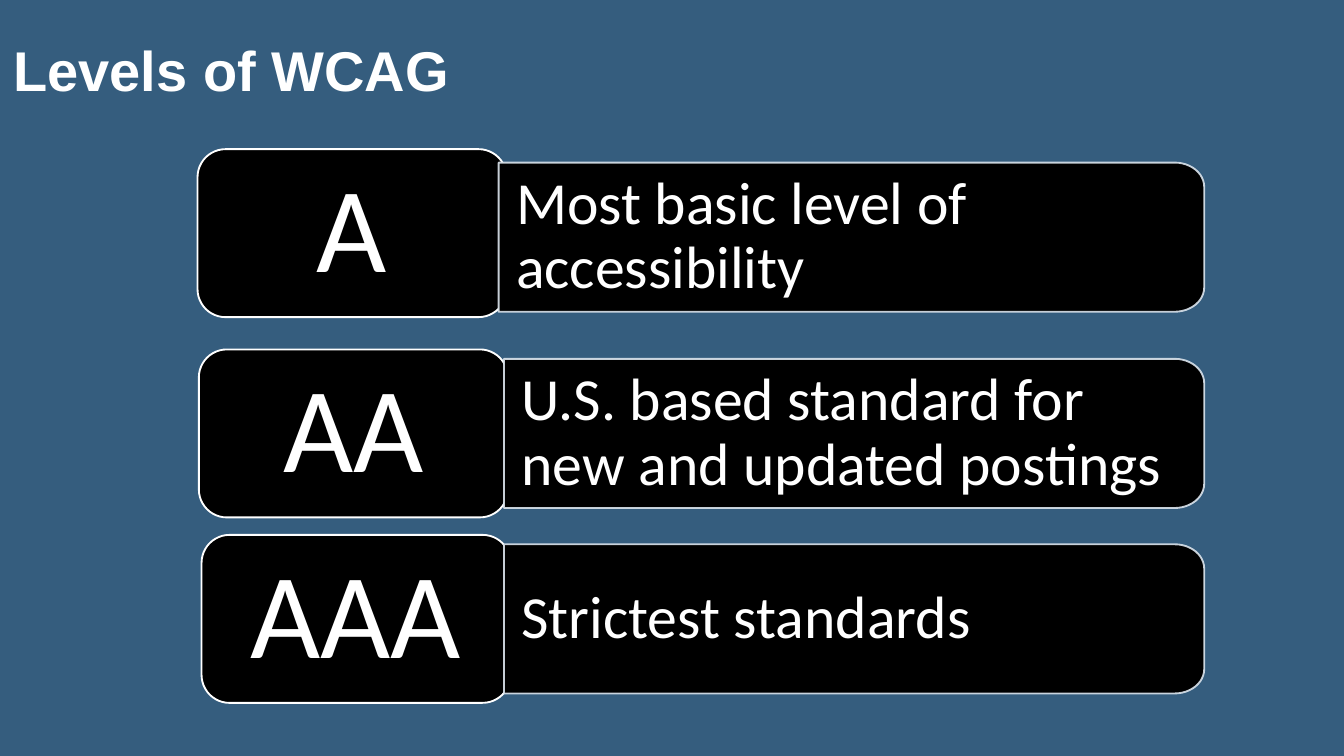
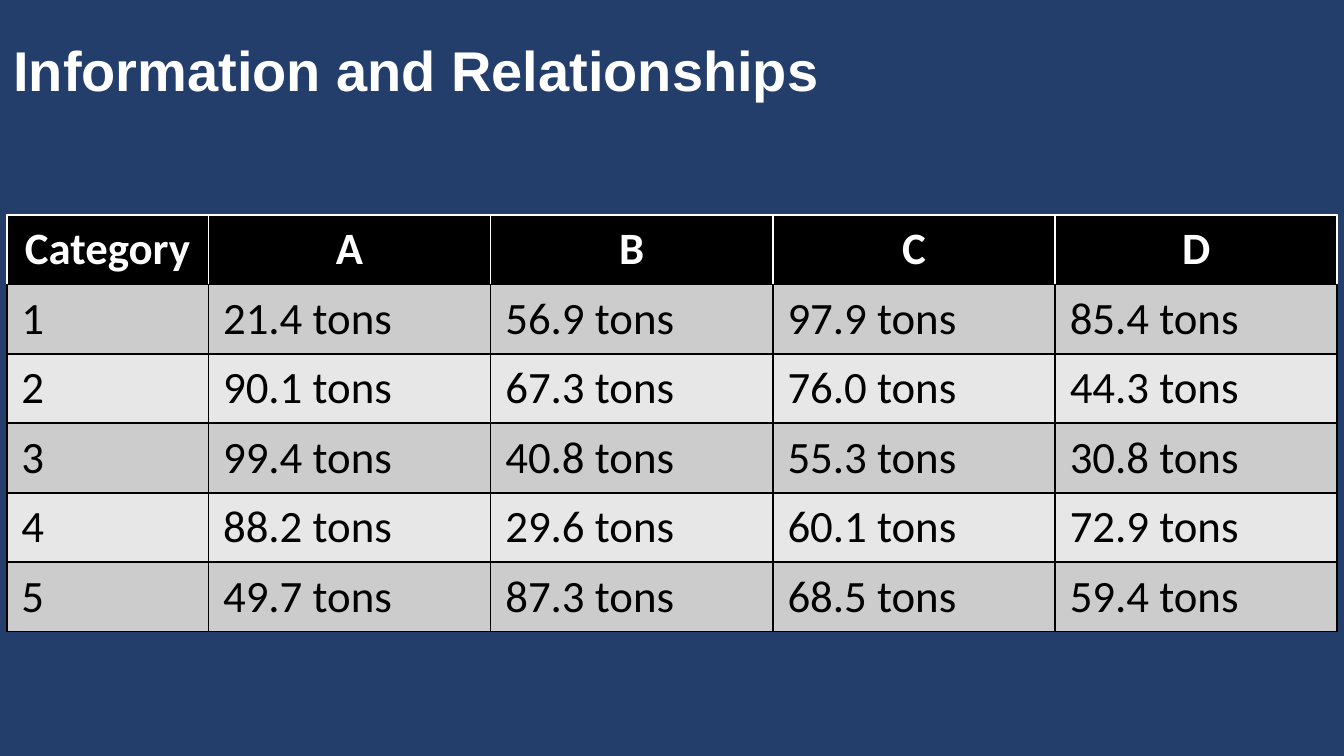
import math

from lxml import etree
from pptx import Presentation
from pptx import util as u
from pptx.dml import color
from pptx.enum import shapes, text
from pptx.oxml import ns

WHITE, BLACK, PALE = "FFFFFF", "000000", "DCE5EE"
STRIPES = ("CCCCCC", "E7E7E7")
HEADING_FONT, BODY_FONT = "Arial", "Calibri"
CELL_MARGIN = 0.11

LEVELS = [
    ("A", 1.47, 1.11, "Most basic level of accessibility", 3.71, 1.21),
    ("AA", 1.48, 2.6, "U.S. based standard for new and updated postings", 3.75, 2.67),
    ("AAA", 1.5, 3.98, "Strictest standards", 3.75, 4.05),
]
HEADERS = ["Category ", "A", "B", "C", "D"]
TONS = [
    (21.4, 56.9, 97.9, 85.4),
    (90.1, 67.3, 76.0, 44.3),
    (99.4, 40.8, 55.3, 30.8),
    (88.2, 29.6, 60.1, 72.9),
    (49.7, 87.3, 68.5, 59.4),
]


def rgb(value):
    return color.RGBColor.from_string(value)


class Deck:
    def __init__(self):
        self.presentation = Presentation()
        self.presentation.slide_width = u.Inches(10)
        self.presentation.slide_height = u.Inches(10 * 9 / 16)
        self.slide = None

    def add_slide(self, title, background):
        layout = self.presentation.slide_layouts[5]
        self.slide = self.presentation.slides.add_slide(layout)
        fill = self.slide.background.fill
        fill.solid()
        fill.fore_color.rgb = rgb(background)
        shape = self.slide.shapes.title
        shape.left = shape.top = u.Inches(0)
        shape.width, shape.height = u.Inches(8.62), u.Inches(1.09)
        frame = shape.text_frame
        frame.text = title
        frame.auto_size = text.MSO_AUTO_SIZE.NONE
        frame.vertical_anchor = text.MSO_ANCHOR.MIDDLE
        self.style(frame, 30, WHITE, True, font=HEADING_FONT, spacing=0.9)

    def style(self, frame, size, ink, bold=False, align=text.PP_ALIGN.LEFT,
              font=BODY_FONT, spacing=None):
        for paragraph in frame.paragraphs:
            paragraph.alignment = align
            paragraph.line_spacing = spacing
            for run in paragraph.runs:
                run.font.name = font
                run.font.size = u.Pt(size)
                run.font.bold = bold
                run.font.color.rgb = rgb(ink)

    def inset(self, target, left, top, right, bottom):
        target.margin_left, target.margin_right = u.Inches(left), u.Inches(right)
        target.margin_top, target.margin_bottom = u.Inches(top), u.Inches(bottom)

    def box(self, shape, words, outline, insets, size, align):
        shape.shadow.inherit = False
        shape.fill.solid()
        shape.fill.fore_color.rgb = rgb(BLACK)
        shape.line.color.rgb = rgb(outline)
        shape.line.width = u.Pt(1)
        frame = shape.text_frame
        frame.text = words
        frame.word_wrap = True
        frame.vertical_anchor = text.MSO_ANCHOR.MIDDLE
        self.inset(frame, *insets)
        self.style(frame, size, WHITE, align=align, spacing=0.9)

    def level_label(self, words, left, top):
        shape = self.slide.shapes.add_shape(
            shapes.MSO_SHAPE.ROUNDED_RECTANGLE,
            u.Inches(left), u.Inches(top), u.Inches(2.3), u.Inches(1.25))
        self.box(shape, words, WHITE, (0.3, 0.16, 0.3, 0.16), 65, text.PP_ALIGN.CENTER)

    def level_description(self, words, left, top):
        right, bottom = 8.96, top + 1.11
        radius_x, radius_y = 0.22, 0.18
        angles = [math.radians(step * 7.5) for step in range(13)]
        curve = [(radius_x * (1 - math.sin(angle)), radius_y * (1 - math.cos(angle)))
                 for angle in angles]
        points = [(right - x, top + y) for x, y in curve]
        points += [(right - x, bottom - y) for x, y in reversed(curve)]
        points.append((left, bottom))
        builder = self.slide.shapes.build_freeform(
            u.Inches(left), u.Inches(top), scale=1.0)
        builder.add_line_segments([(u.Inches(x), u.Inches(y)) for x, y in points])
        shape = builder.convert_to_shape()
        self.box(shape, words, PALE, (0.13, 0.13, 0.2, 0.13), 32, text.PP_ALIGN.LEFT)
        outline = shape.line._ln.find(".//" + ns.qn("a:srgbClr"))
        etree.SubElement(outline, ns.qn("a:alpha"), val="90000")

    def borders(self, cell, edges):
        properties = cell._tc.get_or_add_tcPr()
        for edge, ink in edges.items():
            line = etree.SubElement(properties, ns.qn("a:ln" + edge), w=str(u.Pt(1)))
            fill = etree.SubElement(line, ns.qn("a:solidFill"))
            etree.SubElement(fill, ns.qn("a:srgbClr"), val=ink)

    def table(self, rows, left, top, widths, row_height):
        table = self.slide.shapes.add_table(
            len(rows), len(widths), u.Inches(left), u.Inches(top),
            u.Inches(sum(widths)), u.Inches(row_height * len(rows))).table
        for column, width in zip(table.columns, widths):
            column.width = u.Inches(width)
        for row_index, row in enumerate(rows):
            header = row_index == 0
            edge = WHITE if header else BLACK
            for column_index, words in enumerate(row):
                cell = table.cell(row_index, column_index)
                cell.text = words
                self.inset(cell, CELL_MARGIN, CELL_MARGIN / 2, CELL_MARGIN, CELL_MARGIN / 2)
                self.borders(cell, {"L": edge, "R": edge, "T": edge, "B": BLACK})
                cell.fill.solid()
                cell.fill.fore_color.rgb = rgb(
                    BLACK if header else STRIPES[(row_index - 1) % 2])
                self.style(cell.text_frame, 24, WHITE if header else BLACK, header,
                           text.PP_ALIGN.CENTER if header else text.PP_ALIGN.LEFT)


def main():
    deck = Deck()

    deck.add_slide("Levels of WCAG", "355D7E")
    for label, left, top, *_ in LEVELS:
        deck.level_label(label, left, top)
    for *_, description, left, top in LEVELS:
        deck.level_description(description, left, top)

    deck.add_slide("Information and Relationships", "243E6C")
    rows = [HEADERS]
    for number, values in enumerate(TONS, 1):
        rows.append([str(number)] + [f"{value:.1f} tons" for value in values])
    deck.table(rows, 0.05, 1.6, [1.5] + [2.1] * 4, 0.46)

    deck.presentation.save("out.pptx")


if __name__ == "__main__":
    main()
